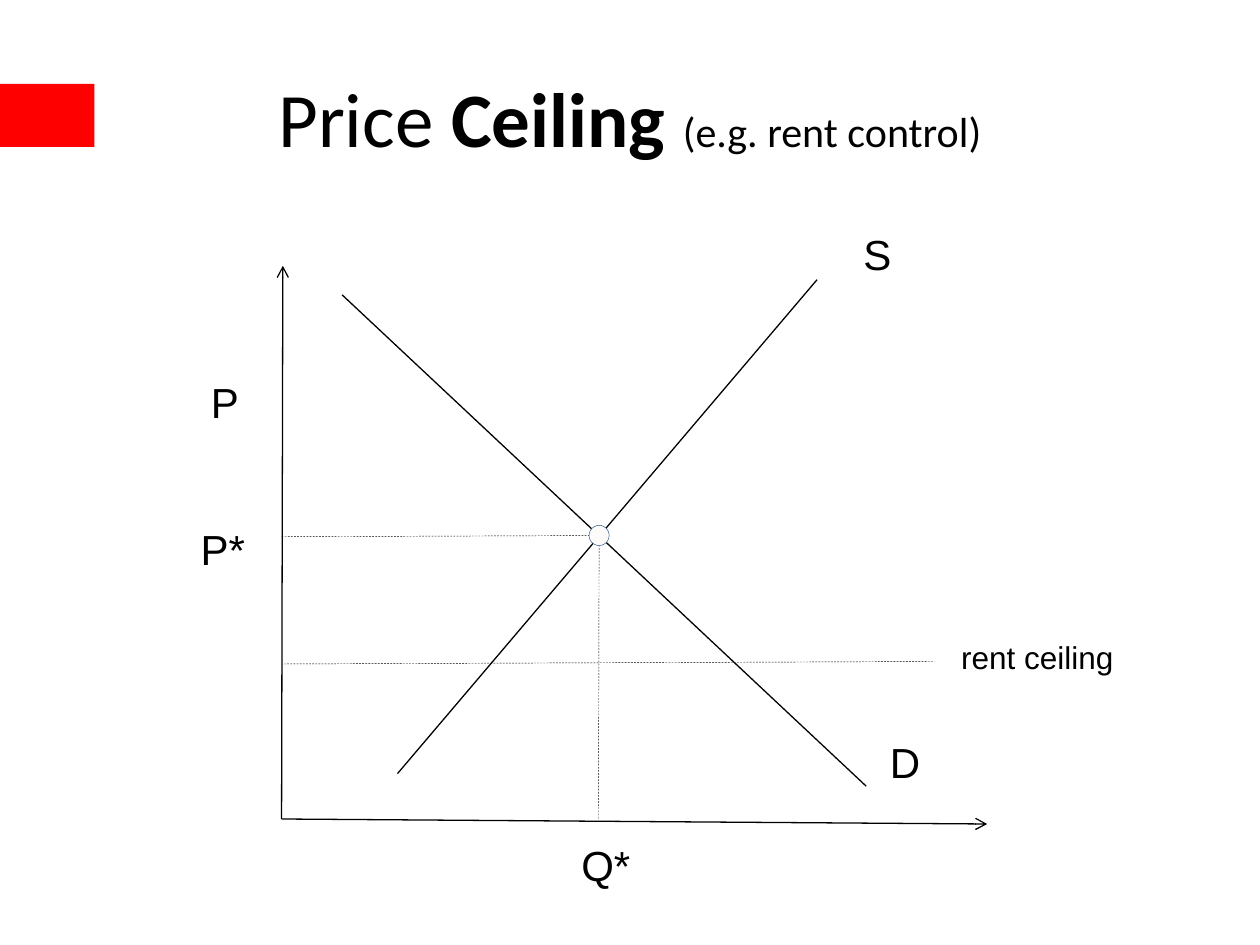
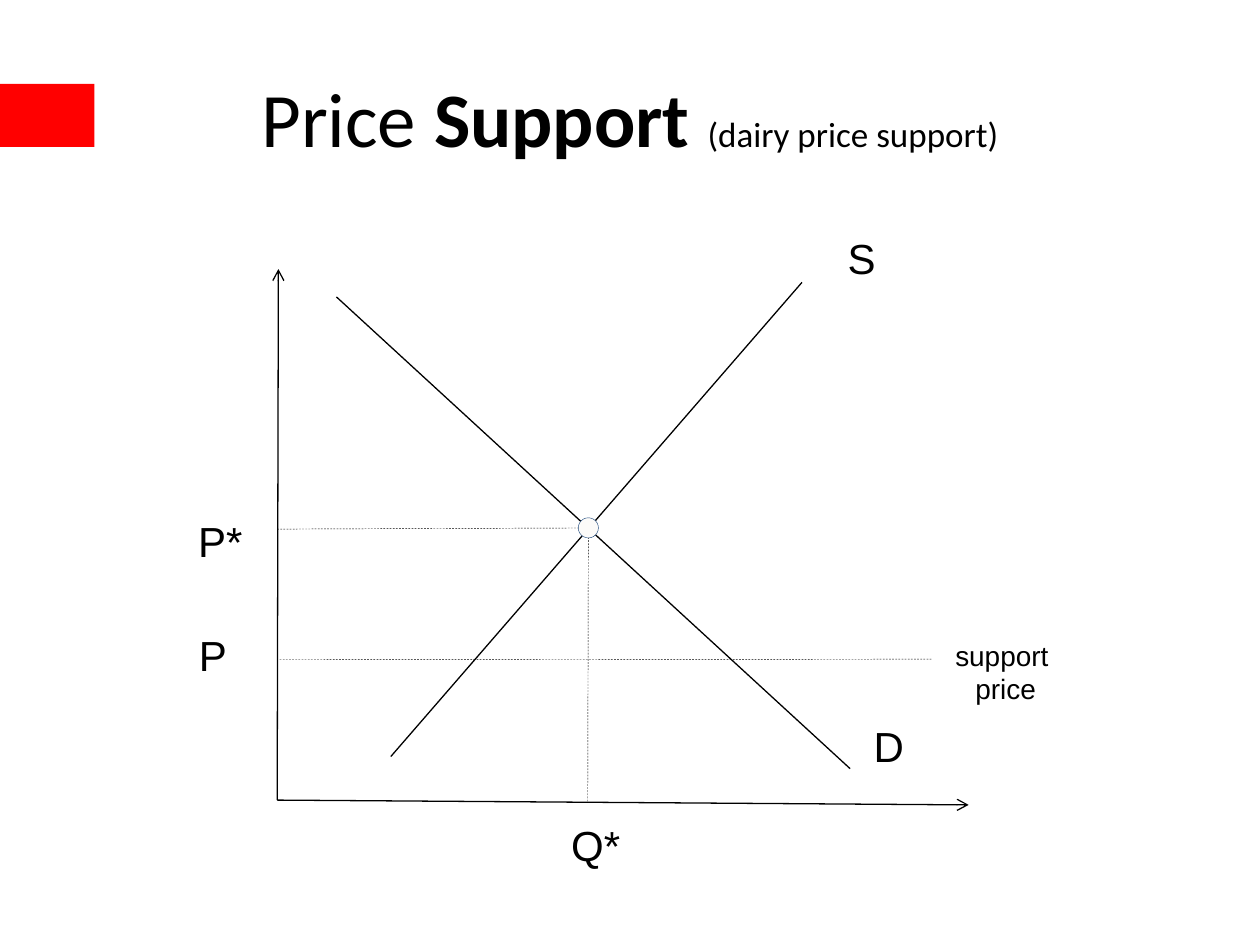
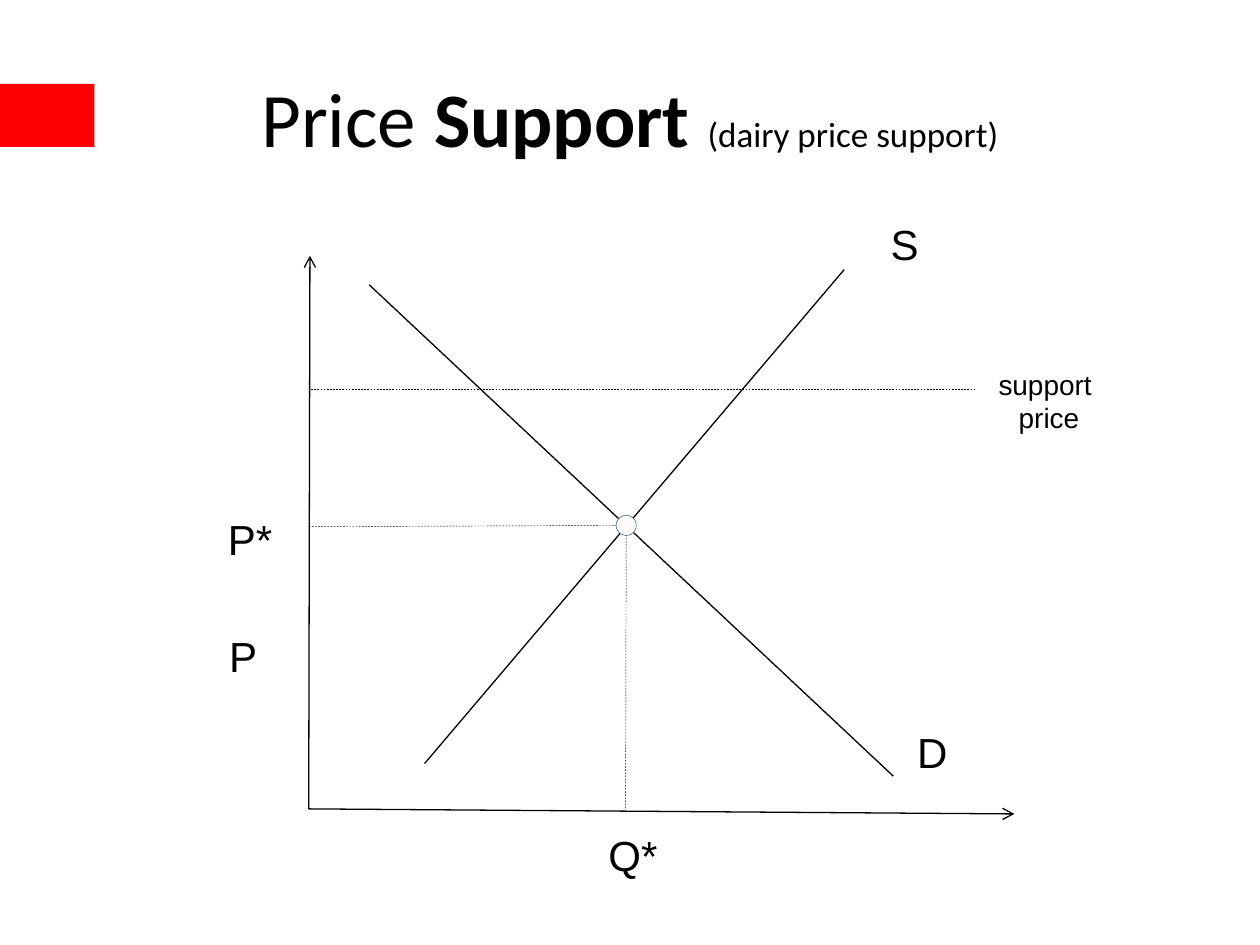
import dataclasses

import pptx
import pptx.dml.color
import pptx.enum.dml
import pptx.enum.shapes
import pptx.enum.text
import pptx.oxml.ns
import pptx.util
import lxml.etree

ALIGN = pptx.enum.text.PP_ALIGN
COLS, ROWS = 100, 75


@dataclasses.dataclass(frozen=True)
class Theme:
    ink: str = "000000"
    band: str = "FF0000"
    dot: str = "FCFBF9"
    rim: str = "1F497D"
    head: str = "Calibri"
    body: str = "Arial"
    title: int = 44
    label: int = 24
    rule: float = 0.75
    thin: float = 0.25
    squeeze: float = 0.8
    gap: float = 3.5


THEME = Theme()


@dataclasses.dataclass(frozen=True)
class Plot:
    left: float
    base: float
    wide: float = 1
    tall: float = 1

    def at(self, col, row):
        return self.left + col * self.wide, self.base - row * self.tall


@dataclasses.dataclass(frozen=True)
class Limit:
    text: str
    size: int
    width: float
    height: float
    spot: tuple
    start: tuple
    end: tuple


def color(code):
    return pptx.dml.color.RGBColor.from_string(code)


def across(cols):
    return pptx.util.Inches(cols * 10 / COLS)


def down(rows):
    return pptx.util.Inches(rows * 7.5 / ROWS)


def place(spot, width, height):
    return across(spot[0]), down(spot[1]), across(width), down(height)


def style(run, size, face, bold=False):
    run.font.size = pptx.util.Pt(size)
    run.font.name = face
    run.font.bold = bold
    run.font.color.rgb = color(THEME.ink)


def add_mark(slide, kind, spot, width, height, fill, rim=None):
    mark = slide.shapes.add_shape(kind, *place(spot, width, height))
    mark.shadow.inherit = False
    mark.fill.solid()
    mark.fill.fore_color.rgb = color(fill)
    if rim:
        mark.line.color.rgb = color(rim)
        mark.line.width = pptx.util.Pt(THEME.thin)
    else:
        mark.line.fill.background()


def add_line(slide, start, end, dash=False, arrow=False):
    line = slide.shapes.add_connector(
        pptx.enum.shapes.MSO_CONNECTOR.STRAIGHT,
        across(start[0]), down(start[1]), across(end[0]), down(end[1]))
    line.line.color.rgb = color(THEME.ink)
    line.line.width = pptx.util.Pt(THEME.thin if dash else THEME.rule)
    if dash:
        line.line.dash_style = pptx.enum.dml.MSO_LINE.DASH
    if arrow:
        tip = lxml.etree.SubElement(line.line._get_or_add_ln(), pptx.oxml.ns.qn("a:tailEnd"))
        tip.set("type", "arrow")
    lxml.etree.SubElement(line._element.spPr, pptx.oxml.ns.qn("a:effectLst"))


def add_label(slide, text, spot, width, height=4.2, size=THEME.label):
    box = slide.shapes.add_textbox(*place(spot, width, height))
    frame = box.text_frame
    frame.text = text
    frame.word_wrap = False
    frame.auto_size = pptx.enum.text.MSO_AUTO_SIZE.SHAPE_TO_FIT_TEXT
    for index, para in enumerate(frame.paragraphs):
        para.line_spacing = THEME.squeeze
        para.alignment = ALIGN.CENTER if "\n" in text else ALIGN.LEFT
        if index:
            para.space_before = pptx.util.Pt(THEME.gap)
        for run in para.runs:
            style(run, size, THEME.body)


def add_title(slide, topic, note, size):
    box = slide.shapes.add_textbox(*place((5, 3), 90, 12.5))
    frame = box.text_frame
    frame.word_wrap = True
    frame.vertical_anchor = pptx.enum.text.MSO_ANCHOR.MIDDLE
    para = frame.paragraphs[0]
    para.alignment = ALIGN.CENTER
    parts = (("Price ", THEME.title, False), (topic + " ", THEME.title, True), (note, size, False))
    for text, points, bold in parts:
        run = para.add_run()
        run.text = text
        style(run, points, THEME.head, bold)


def add_graph(slide, plot, price, limit):
    at = plot.at
    add_line(slide, at(25.2, 22), at(25.15, -0.1), dash=True)
    add_line(slide, at(46.4, 2.6), at(4.8, 41.6))
    add_line(slide, at(0, 0), at(56, -0.4), arrow=True)
    add_line(slide, at(0, 0), at(0.1, 43.9), arrow=True)
    add_line(slide, at(9.2, 3.6), at(42.5, 42.8))
    add_line(slide, at(0, 22.4), at(26, 22.5), dash=True)
    col, row = at(25.2, 22.5)
    add_mark(slide, pptx.enum.shapes.MSO_SHAPE.OVAL, (col - 0.8, row - 0.8),
             1.6, 1.6, THEME.dot, THEME.rim)
    add_line(slide, at(*limit.start), at(*limit.end), dash=True)
    for text, spot, width in (
            ("P*", (-7.4, 23.2), 5.6), ("Q*", (22.8, -1.9), 5.9), ("P", price, 4.3),
            ("S", (45.2, 46.6), 4.3), ("D", (47.3, 6.3), 4.5)):
        add_label(slide, text, at(*spot), width)
    add_label(slide, limit.text, at(*limit.spot), limit.width, limit.height, limit.size)


def add_page(deck, title, plot, price, limit):
    slide = deck.slides.add_slide(deck.slide_layouts[6])
    add_mark(slide, pptx.enum.shapes.MSO_SHAPE.RECTANGLE, (0, 6.67), 7.5, 5, THEME.band)
    add_title(slide, *title)
    add_graph(slide, plot, price, limit)


def main():
    deck = pptx.Presentation()
    deck.slide_width, deck.slide_height = across(COLS), down(ROWS)
    rent = ("Ceiling", "(e.g. rent control)", 24)
    dairy = ("Support", "(dairy price support)", 20)
    words = "support \nprice"
    add_page(deck, rent, Plot(22.35, 65), (-6.6, 34.8),
             Limit("rent ceiling", 18, 14.2, 3.4, (52.95, 14.3), (0.2, 12.3), (51.8, 12.5)))
    add_page(deck, dairy, Plot(22, 63.5, 0.98, 0.96), (-7.35, 13.85),
             Limit(words, 16, 10, 5.6, (53.9, 13.35), (0.2, 11.6), (53, 11.65)))
    add_page(deck, dairy, Plot(24.5, 64.2), (-7.3, 13.9),
             Limit(words, 16, 10.1, 5.9, (53.7, 35), (0.2, 33.3), (52.8, 33.3)))
    deck.save("out.pptx")


if __name__ == "__main__":
    main()
